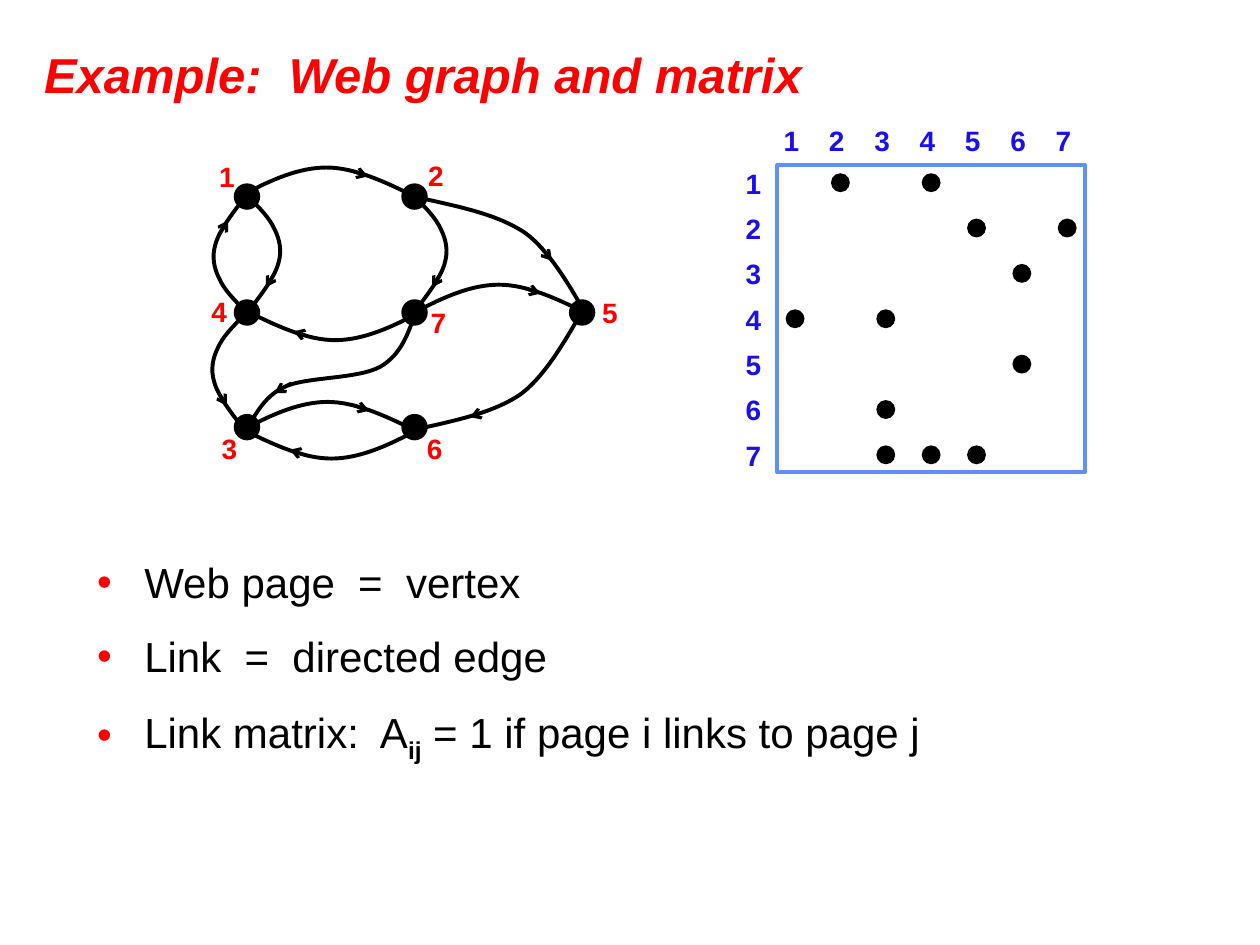
from dataclasses import dataclass, replace

from lxml.etree import SubElement
from pptx import Presentation
from pptx.dml.color import RGBColor
from pptx.enum.shapes import MSO_CONNECTOR, MSO_SHAPE
from pptx.enum.text import MSO_ANCHOR, MSO_AUTO_SIZE, PP_ALIGN
from pptx.oxml.ns import qn
from pptx.shapes.base import BaseShape
from pptx.slide import Slide
from pptx.util import Inches, Pt

Point = tuple[float, float]


@dataclass(frozen=True)
class Theme:
    font: str = "Arial"
    red: str = "FF0000"
    black: str = "000000"
    label_blue: str = "1A0FEF"
    frame_blue: str = "618FFD"
    title_size: float = 28
    body_size: float = 24
    label_size: float = 16
    line_width: float = 2.25
    arrow_width: float = 1.75


@dataclass(frozen=True)
class Vertex:
    name: int
    center: Point
    label: Point


@dataclass(frozen=True)
class Bend:
    """Bezier points after the start, and an arrow, as offsets from the start."""
    points: tuple[Point, ...]
    arrow: tuple[Point, Point]


@dataclass(frozen=True)
class Link:
    source: int
    target: int
    bend: Bend
    start: Point
    flip: Point = (1, 1)


THEME = Theme()
LEFT, MIDDLE, RIGHT = 1.96, 3.29, 4.62
TOP, CENTER, BOTTOM = 1.56, 2.48, 3.39
VERTEX_SIZE, DOT_SIZE = 0.21, 0.15
LABEL_WIDTH, LABEL_HEIGHT = 0.32, 0.37
PITCH = 0.36

VERTICES = (
    Vertex(1, (LEFT, TOP), (1.64, 1.22)),
    Vertex(2, (MIDDLE, TOP), (3.3, 1.21)),
    Vertex(3, (LEFT, BOTTOM), (1.66, 3.38)),
    Vertex(4, (LEFT, CENTER), (1.58, 2.29)),
    Vertex(5, (RIGHT, CENTER), (4.68, 2.3)),
    Vertex(6, (MIDDLE, BOTTOM), (3.29, 3.38)),
    Vertex(7, (MIDDLE, CENTER), (3.32, 2.38)),
)

ARCH = Bend(
    ((0.21, -0.11), (0.43, -0.21), (0.65, -0.21),
     (0.87, -0.21), (1.11, -0.1), (1.35, 0.02)),
    ((0.83, -0.19), (0.98, -0.14)))
SIDE = Bend(
    ((0.08, 0.08), (0.16, 0.16), (0.2, 0.25),
     (0.24, 0.33), (0.26, 0.42), (0.23, 0.52),
     (0.2, 0.63), (0.1, 0.76), (0, 0.89)),
    ((0.21, 0.58), (0.13, 0.71)))
SWEEP = Bend(
    ((-0.07, 0.11), (-0.26, 0.48), (-0.48, 0.64),
     (-0.7, 0.79), (-1.01, 0.85), (-1.32, 0.92)),
    ((-0.74, 0.77), (-0.88, 0.82)))
# Drawn from its target, so its arrow points back to the start.
INWARD_SWEEP = replace(SWEEP, arrow=((-0.37, 0.54), (-0.27, 0.42)))
WAVE = Bend(
    ((-0.06, 0.16), (-0.11, 0.33), (-0.28, 0.43),
     (-0.46, 0.53), (-0.87, 0.51), (-1.04, 0.59),
     (-1.22, 0.67), (-1.29, 0.86), (-1.34, 0.91)),
    ((-0.99, 0.56), (-1.12, 0.64)))

LINKS = (
    Link(1, 2, ARCH, (1.94, 1.54)),
    Link(7, 5, ARCH, (3.31, 2.47)),
    Link(3, 6, ARCH, (1.95, 3.4)),
    Link(6, 3, ARCH, (3.28, 3.43), (-1, -1)),
    Link(7, 4, ARCH, (3.31, 2.49), (-1, -1)),
    Link(4, 1, SIDE, (1.94, 2.46), (-1, -1)),
    Link(4, 3, SIDE, (1.93, 2.51), (-1, 1)),
    Link(1, 4, SIDE, (1.98, 1.57)),
    Link(2, 7, SIDE, (3.3, 1.57)),
    Link(7, 3, WAVE, (3.3, 2.48)),
    Link(5, 6, SWEEP, (4.61, 2.49)),
    Link(2, 5, INWARD_SWEEP, (4.65, 2.49), (1, -1)),
)

BODY = (
    ("Web page  =  vertex",),
    ("Link  =  directed edge",),
    ("Link matrix:  A", "ij", " = 1 if page i links to page j"),
)


def color(value: str) -> RGBColor:
    return RGBColor.from_string(value)


def place(shape: BaseShape, left: float, top: float, width: float, height: float) -> None:
    shape.left, shape.top = Inches(left), Inches(top)
    shape.width, shape.height = Inches(width), Inches(height)


def style_font(font, size: float, fill: str, bold: bool = False) -> None:
    font.name, font.size, font.bold = THEME.font, Pt(size), bold
    font.color.rgb = color(fill)


def add_title(page: Slide) -> None:
    title = page.shapes.title
    place(title, 0.25, 0.25, 9.75, 0.67)
    frame = title.text_frame
    frame.text = "Example:  Web graph and matrix"
    frame.vertical_anchor = MSO_ANCHOR.MIDDLE
    frame.auto_size = MSO_AUTO_SIZE.NONE
    para = frame.paragraphs[0]
    para.alignment = PP_ALIGN.LEFT
    font = para.runs[0].font
    style_font(font, THEME.title_size, THEME.red, bold=True)
    font.italic = True


def add_body(page: Slide) -> None:
    body = page.placeholders[1]
    place(body, 0.67, 4.25, 8.25, 3)
    frame = body.text_frame
    frame.text = "\n".join("" for _ in BODY)
    frame.auto_size = MSO_AUTO_SIZE.NONE
    for para, pieces in zip(frame.paragraphs, BODY):
        para.line_spacing = 1.3
        bullet = SubElement(para._p.get_or_add_pPr(), qn("a:buClr"))
        SubElement(bullet, qn("a:srgbClr"), val=THEME.red)
        for piece in pieces:
            span = para.add_run()
            span.text = piece
            subscript = piece == "ij"
            style_font(span.font, THEME.body_size, THEME.black, bold=subscript)
            if subscript:
                span._r.get_or_add_rPr().set("baseline", "-25000")


def add_label(page: Slide, text: str, at: Point, fill: str,
              alignment: PP_ALIGN = PP_ALIGN.LEFT) -> None:
    box = page.shapes.add_textbox(*map(Inches, (*at, LABEL_WIDTH, LABEL_HEIGHT)))
    frame = box.text_frame
    frame.text = text
    frame.word_wrap = False
    frame.auto_size = MSO_AUTO_SIZE.SHAPE_TO_FIT_TEXT
    para = frame.paragraphs[0]
    para.alignment = alignment
    style_font(para.runs[0].font, THEME.label_size, fill, bold=True)


def add_disc(page: Slide, center: Point, size: float) -> None:
    disc = page.shapes.add_shape(
        MSO_SHAPE.OVAL, Inches(center[0] - size / 2), Inches(center[1] - size / 2),
        Inches(size), Inches(size))
    disc.shadow.inherit = False
    disc.fill.solid()
    disc.fill.fore_color.rgb = color(THEME.black)
    disc.line.fill.background()


def add_curve(page: Slide, start: Point, points: list[Point]) -> None:
    """Draw a chain of Bezier arcs; every three points end one arc."""
    builder = page.shapes.build_freeform(*map(Inches, start))
    builder.add_line_segments([tuple(map(Inches, point)) for point in points], close=False)
    curve = builder.convert_to_shape()
    outline = curve._element.xpath(".//a:path")[0]
    segments = outline.findall(qn("a:lnTo"))
    for first in range(0, len(segments), 3):
        arc = SubElement(outline, qn("a:cubicBezTo"))
        for segment in segments[first:first + 3]:
            arc.append(segment[0])
            outline.remove(segment)
    curve.shadow.inherit = False
    curve.fill.background()
    curve.line.color.rgb = color(THEME.black)
    curve.line.width = Pt(THEME.line_width)


def add_arrow(page: Slide, tail: Point, tip: Point) -> None:
    arrow = page.shapes.add_connector(MSO_CONNECTOR.STRAIGHT, *map(Inches, (*tail, *tip)))
    arrow.line.color.rgb = color(THEME.black)
    arrow.line.width = Pt(THEME.arrow_width)
    properties = arrow._element.spPr
    SubElement(properties.find(qn("a:ln")), qn("a:tailEnd"), type="arrow")
    SubElement(properties, qn("a:effectLst"))


def add_link(page: Slide, link: Link) -> None:
    def locate(offset: Point) -> Point:
        return (link.start[0] + link.flip[0] * offset[0],
                link.start[1] + link.flip[1] * offset[1])

    add_arrow(page, *map(locate, link.bend.arrow))
    add_curve(page, link.start, [locate(point) for point in link.bend.points])


def add_graph(page: Slide) -> None:
    for vertex in VERTICES:
        add_disc(page, vertex.center, VERTEX_SIZE)
        add_label(page, str(vertex.name), vertex.label, THEME.red)
    for link in LINKS:
        add_link(page, link)


def add_matrix(page: Slide) -> None:
    frame = page.shapes.add_shape(MSO_SHAPE.RECTANGLE, *map(Inches, (6.17, 1.31, 2.44, 2.44)))
    frame.shadow.inherit = False
    frame.fill.background()
    frame.line.color.rgb = color(THEME.frame_blue)
    frame.line.width = Pt(THEME.line_width)
    for index, vertex in enumerate(VERTICES):
        step = PITCH * index
        add_label(page, str(vertex.name), (6.12 + step, 0.93), THEME.label_blue)
        add_label(page, str(vertex.name), (5.82, 1.27 + step), THEME.label_blue, PP_ALIGN.RIGHT)
    for link in LINKS:
        center = (6.31 + PITCH * (link.target - 1), 1.45 + PITCH * (link.source - 1))
        add_disc(page, center, DOT_SIZE)


def main() -> None:
    deck = Presentation()
    deck.slide_width, deck.slide_height = Inches(10), Inches(7.5)
    page = deck.slides.add_slide(deck.slide_layouts[1])
    add_title(page)
    add_body(page)
    add_graph(page)
    add_matrix(page)
    deck.save("out.pptx")


if __name__ == "__main__":
    main()
